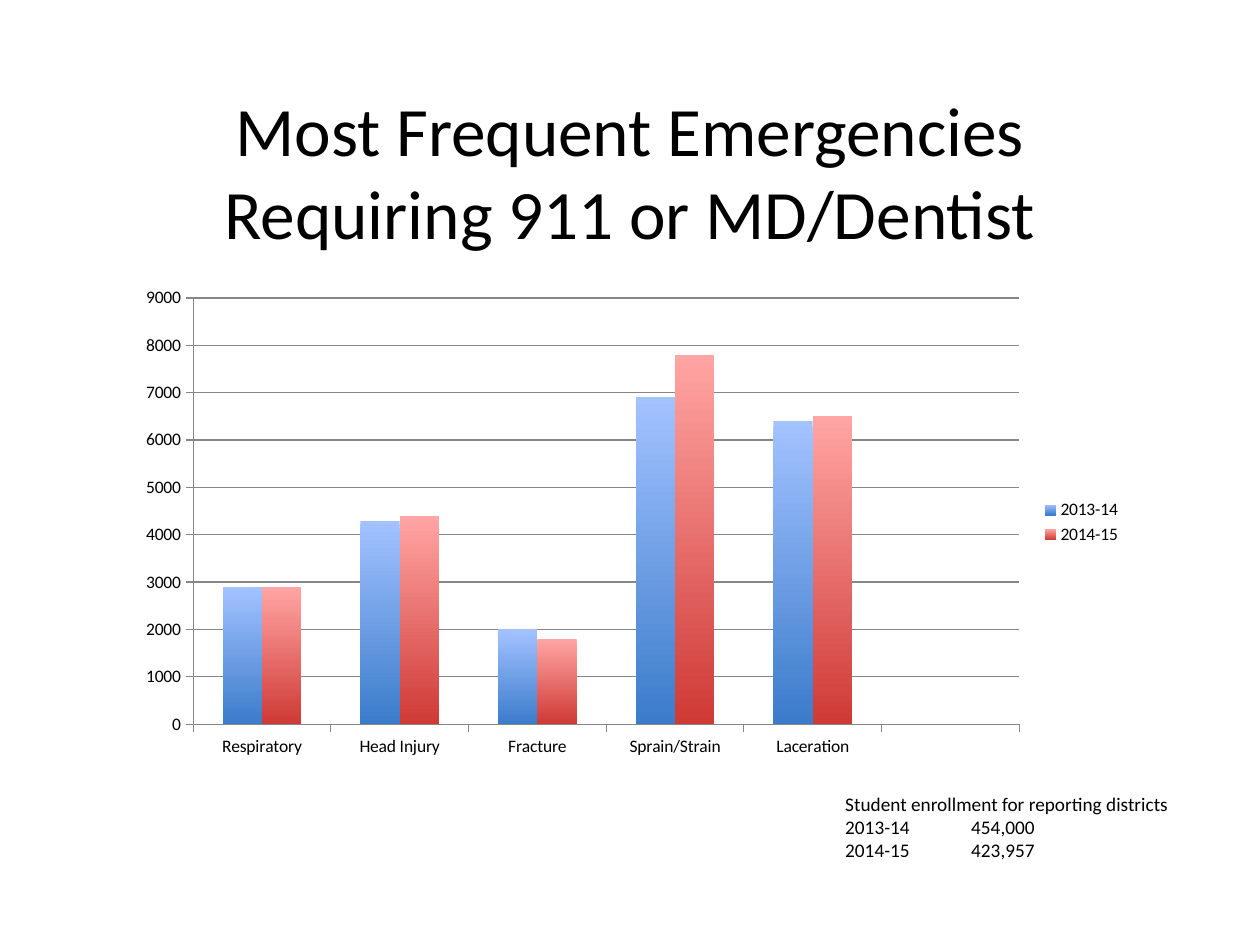
from dataclasses import dataclass

from pptx import Presentation
from pptx.chart.data import CategoryChartData
from pptx.dml.color import RGBColor
from pptx.enum.chart import XL_CHART_TYPE as ChartType
from pptx.enum.chart import XL_LEGEND_POSITION as LegendPosition
from pptx.enum.chart import XL_TICK_MARK as TickMark
from pptx.enum.text import MSO_ANCHOR as Anchor
from pptx.enum.text import MSO_AUTO_SIZE as AutoSize
from pptx.enum.text import PP_ALIGN as Align
from pptx.slide import Slide
from pptx.util import Pt

FONT = "Calibri"
BLACK = RGBColor(0x00, 0x00, 0x00)
AXIS_GRAY = RGBColor(0x86, 0x86, 0x86)
LIGHT_BLUE = RGBColor(0xA3, 0xC2, 0xFF)
DEEP_BLUE = RGBColor(0x3B, 0x7C, 0xCB)
LIGHT_RED = RGBColor(0xFF, 0xA5, 0xA3)
DEEP_RED = RGBColor(0xCF, 0x3A, 0x36)


@dataclass(frozen=True)
class Box:
    left: float
    top: float
    width: float
    height: float

    def lengths(self) -> tuple[Pt, Pt, Pt, Pt]:
        return Pt(self.left), Pt(self.top), Pt(self.width), Pt(self.height)


@dataclass(frozen=True)
class TextBlock:
    box: Box
    lines: tuple[str, ...]
    size: float
    align: Align = Align.LEFT
    anchor: Anchor = Anchor.TOP
    wrap: bool = True
    fit: AutoSize = AutoSize.NONE


@dataclass(frozen=True)
class SchoolYear:
    name: str
    counts: tuple[int | None, ...]
    top_color: RGBColor
    bottom_color: RGBColor


HEADING = TextBlock(
    Box(72, 51.84, 576, 90.72),
    ("Most Frequent Emergencies Requiring 911 or MD/Dentist",),
    39.6,
    Align.CENTER,
    Anchor.MIDDLE,
)
ENROLLMENT = TextBlock(
    Box(475.92, 449.28, 211.68, 47.52),
    (
        "Student enrollment for reporting districts",
        "2013-14\t454,000",
        "2014-15\t423,957",
    ),
    11,
    wrap=False,
    fit=AutoSize.SHAPE_TO_FIT_TEXT,
)
EMERGENCIES_BOX = Box(72, 159.12, 576, 278.64)
EMERGENCIES = ("Respiratory", "Head Injury", "Fracture", "Sprain/Strain", "Laceration", "")
YEARS = (
    SchoolYear("2013-14", (2900, 4300, 2000, 6900, 6400, None), LIGHT_BLUE, DEEP_BLUE),
    SchoolYear("2014-15", (2900, 4400, 1800, 7800, 6500, None), LIGHT_RED, DEEP_RED),
)


def draw_text(slide: Slide, block: TextBlock) -> None:
    frame = slide.shapes.add_textbox(*block.box.lengths()).text_frame
    frame.word_wrap = block.wrap
    frame.auto_size = block.fit
    frame.vertical_anchor = block.anchor
    frame.text = "\n".join(block.lines)
    for line in frame.paragraphs:
        line.alignment = block.align
        line.font.name = FONT
        line.font.size = Pt(block.size)
        line.font.color.rgb = BLACK


def draw_emergencies(slide: Slide) -> None:
    data = CategoryChartData(number_format="General")
    data.categories = EMERGENCIES
    for year in YEARS:
        data.add_series(year.name, year.counts)
    chart = slide.shapes.add_chart(
        ChartType.COLUMN_CLUSTERED, *EMERGENCIES_BOX.lengths(), data
    ).chart
    chart.has_title = False
    chart.font.name = FONT
    chart.font.size = Pt(10)
    chart.font.color.rgb = BLACK
    chart.has_legend = True
    chart.legend.position = LegendPosition.RIGHT
    chart.legend.include_in_layout = False

    counts_axis = chart.value_axis
    counts_axis.minimum_scale = 0
    counts_axis.maximum_scale = 9000
    counts_axis.major_unit = 1000
    counts_axis.has_major_gridlines = True
    counts_axis.major_gridlines.format.line.color.rgb = AXIS_GRAY
    for axis in (chart.category_axis, counts_axis):
        axis.major_tick_mark = TickMark.OUTSIDE
        axis.format.line.color.rgb = AXIS_GRAY

    columns = chart.plots[0]
    columns.vary_by_categories = False
    columns.gap_width = 150
    columns.overlap = 0
    for series, year in zip(columns.series, YEARS):
        fill = series.format.fill
        fill.gradient()
        fill.gradient_angle = 270
        for stop, color in zip(fill.gradient_stops, (year.top_color, year.bottom_color)):
            stop.color.rgb = color


def main() -> None:
    deck = Presentation()
    deck.slide_width = Pt(720)
    deck.slide_height = Pt(540)
    slide = deck.slides.add_slide(deck.slide_layouts[6])
    draw_text(slide, HEADING)
    draw_emergencies(slide)
    draw_text(slide, ENROLLMENT)
    deck.save("out.pptx")


if __name__ == "__main__":
    main()
